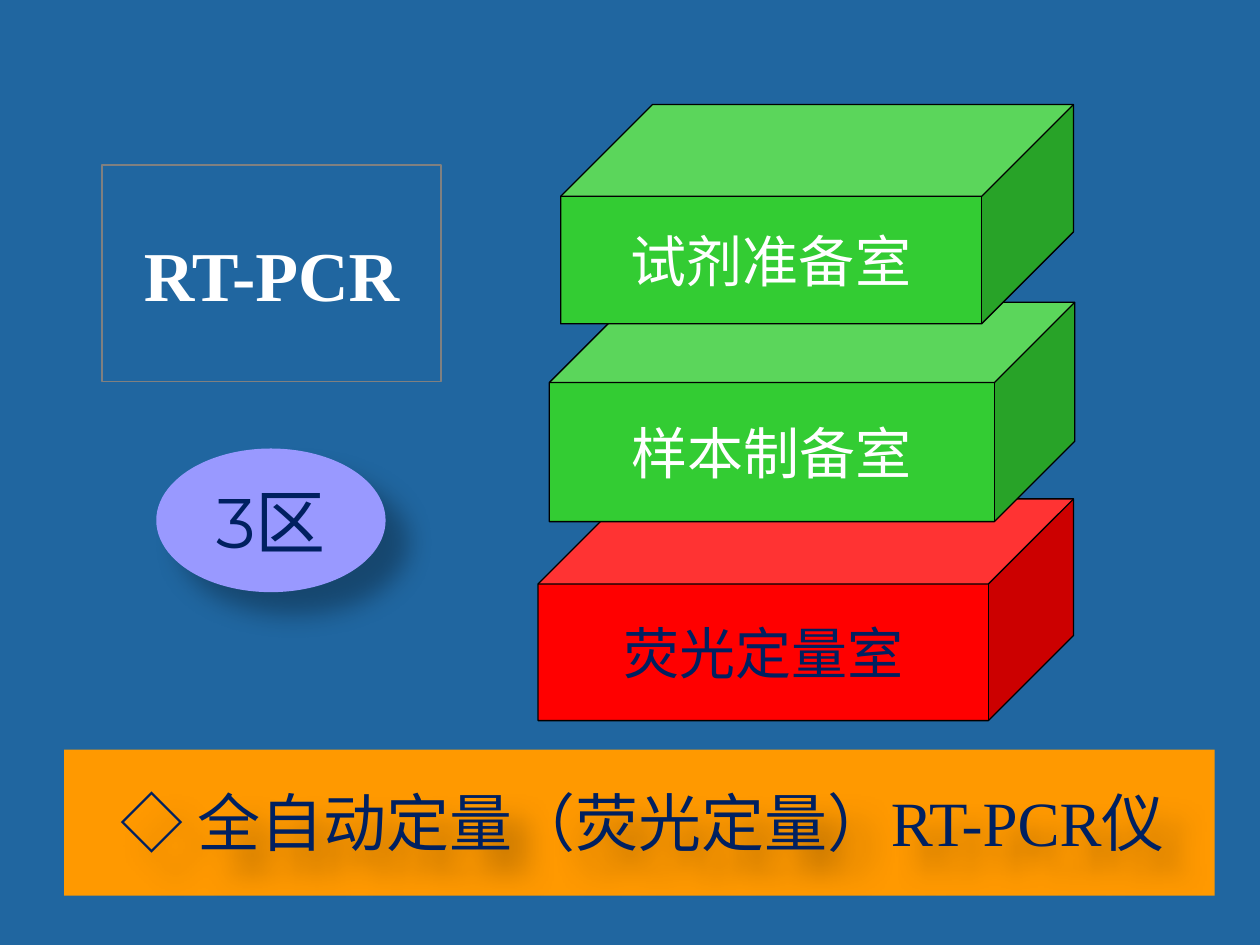
from lxml import etree
from pptx import Presentation
from pptx.dml.color import RGBColor
from pptx.enum.shapes import MSO_SHAPE as Shape
from pptx.enum.text import MSO_ANCHOR as Anchor, PP_ALIGN as Align
from pptx.oxml.ns import qn
from pptx.util import Inches, Pt

SERIF = "Times New Roman"
NAVY = "002060"
WHITE = "FFFFFF"
GREEN = "33CC33"


def color(hex_value):
    return RGBColor.from_string(hex_value)


def add_block(slide, kind, box, fill=None, line=None):
    """Add a preset shape with an optional fill and thin outline."""
    shape = slide.shapes.add_shape(kind, *map(Inches, box))
    shape.shadow.inherit = False
    if fill:
        shape.fill.solid()
        shape.fill.fore_color.rgb = color(fill)
    else:
        shape.fill.background()
    if line:
        shape.line.color.rgb = color(line)
        shape.line.width = Pt(0.75)
    else:
        shape.line.fill.background()
    return shape


def add_text(shape, text, size, ink, font=SERIF, bold=False,
             align=Align.CENTER, anchor=Anchor.MIDDLE, wrap=True):
    frame = shape.text_frame
    frame.word_wrap = wrap
    frame.vertical_anchor = anchor
    paragraph = frame.paragraphs[0]
    paragraph.alignment = align
    run = paragraph.add_run()
    run.text = text
    run.font.name = font
    run.font.size = Pt(size)
    run.font.bold = bold
    run.font.color.rgb = color(ink)


def add_shadow(shape):
    """Cast a soft shadow to the lower right."""
    shape.shadow.inherit = False
    effects = shape._element.spPr.find(qn("a:effectLst"))
    shadow = etree.SubElement(
        effects, qn("a:outerShdw"), blurRad=str(Pt(15)), dist=str(Pt(18)),
        dir=str(45 * 60000), algn="tl", rotWithShape="0")
    ink = etree.SubElement(shadow, qn("a:srgbClr"), val="000000")
    etree.SubElement(ink, qn("a:alpha"), val="30000")


def add_room(slide, name, box, depth, fill, ink):
    cube = add_block(slide, Shape.CUBE, box, fill, "000000")
    cube.adjustments[0] = depth
    add_text(cube, name, 32, ink, wrap=False)


def main():
    presentation = Presentation()
    presentation.slide_width = Inches(10)
    presentation.slide_height = Inches(7.5)
    slide = presentation.slides.add_slide(presentation.slide_layouts[6])
    slide.background.fill.solid()
    slide.background.fill.fore_color.rgb = color("2066A0")

    # Stacked rooms, bottom to top
    rooms = [
        ("荧光定量室", (4.27, 3.96, 4.25, 1.76), 0.384, "FF0000", NAVY),
        ("样本制备室", (4.36, 2.4, 4.17, 1.74), 0.366, GREEN, WHITE),
        ("试剂准备室", (4.45, 0.83, 4.07, 1.74), 0.419, GREEN, WHITE),
    ]
    for room in rooms:
        add_room(slide, *room)

    # Title frame
    title = add_block(slide, Shape.RECTANGLE, (0.81, 1.31, 2.69, 1.72),
                      line="808080")
    add_text(title, "RT-PCR", 40, WHITE, bold=True)

    # Zone count
    zones = add_block(slide, Shape.OVAL, (1.24, 3.56, 1.82, 1.14), "9999FF")
    add_text(zones, "3区", 40, NAVY, font="Montserrat")
    add_shadow(zones)

    # Instrument banner
    add_block(slide, Shape.RECTANGLE, (0.51, 5.95, 9.13, 1.16), "FF9900")
    instrument = slide.shapes.add_textbox(
        Inches(0.86), Inches(6.17), Inches(8.78), Inches(0.71))
    add_text(instrument, "◇ 全自动定量（荧光定量）RT-PCR仪", 36, NAVY,
             align=Align.LEFT, anchor=Anchor.TOP)
    add_shadow(instrument)

    presentation.save("out.pptx")


if __name__ == "__main__":
    main()
